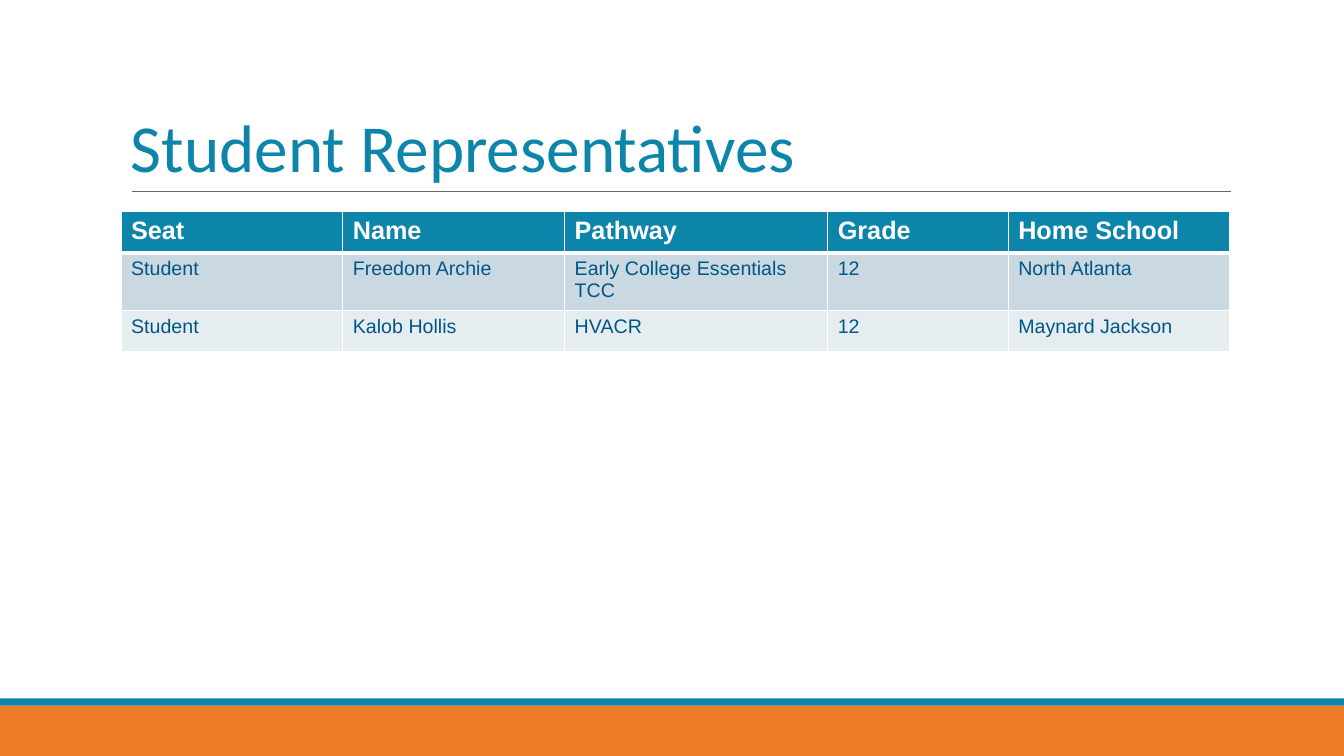
import pptx
import pptx.util
import pptx.dml.color
import pptx.enum.shapes
import pptx.enum.text
import pptx.oxml
import pptx.oxml.ns

Inches = pptx.util.Inches
Pt = pptx.util.Pt
RGBColor = pptx.dml.color.RGBColor

TEAL = RGBColor(0x0D, 0x85, 0xAB)
ORANGE = RGBColor(0xEE, 0x7C, 0x29)
NAVY = RGBColor(0x00, 0x56, 0x85)
GRAY = RGBColor(0x66, 0x66, 0x66)
WHITE = RGBColor(0xFF, 0xFF, 0xFF)
ROW_FILLS = [TEAL, RGBColor(0xCA, 0xD8, 0xE2), RGBColor(0xE6, 0xED, 0xF1)]


def add_borders(cell, bottom_width):
    properties = cell._tc.get_or_add_tcPr()
    widths = {"lnL": 1, "lnR": 1, "lnT": 1, "lnB": bottom_width}
    for position, (side, width) in enumerate(widths.items()):
        border = pptx.oxml.parse_xml(
            f'<a:{side} {pptx.oxml.ns.nsdecls("a")} w="{Pt(width)}">'
            f'<a:solidFill><a:srgbClr val="{WHITE}"/></a:solidFill></a:{side}>'
        )
        properties.insert(position, border)


deck = pptx.Presentation()
deck.slide_width = Inches(13.33)
deck.slide_height = Inches(7.5)
page = deck.slides.add_slide(deck.slide_layouts[6])

# Footer bands
for top, height, color in [(7, 0.5, ORANGE), (6.93, 0.07, TEAL)]:
    band = page.shapes.add_shape(
        pptx.enum.shapes.MSO_SHAPE.RECTANGLE,
        Inches(0), Inches(top), Inches(13.33), Inches(height))
    band.shadow.inherit = False
    band.fill.solid()
    band.fill.fore_color.rgb = color
    band.line.fill.background()

# Rule under the title
rule = page.shapes.add_connector(
    pptx.enum.shapes.MSO_CONNECTOR.STRAIGHT,
    Inches(1.31), Inches(1.9), Inches(12.21), Inches(1.9))
rule.line.color.rgb = GRAY
rule.line.width = Pt(0.75)
rule._element.spPr.append(
    pptx.oxml.parse_xml(f'<a:effectLst {pptx.oxml.ns.nsdecls("a")}/>'))

# Title
title = page.shapes.add_textbox(Inches(1.2), Inches(0.31), Inches(11), Inches(1.59))
title.text_frame.word_wrap = True
title.text_frame.vertical_anchor = pptx.enum.text.MSO_ANCHOR.BOTTOM
para = title.text_frame.paragraphs[0]
para.text = "Student Representatives"
para.line_spacing = 0.85
para.font.name = "Calibri"
para.font.size = Pt(48)
para.font.color.rgb = TEAL

# Table of representatives
representatives = [
    ["Seat", "Name", "Pathway", "Grade", "Home School"],
    ["Student", "Freedom Archie", "Early College Essentials TCC", "12", "North Atlanta"],
    ["Student", "Kalob Hollis", "HVACR", "12", "Maynard Jackson"],
]
column_widths = [2.2, 2.2, 2.61, 1.79, 2.2]
row_heights = [0.41, 0.53, 0.41]
table = page.shapes.add_table(
    len(row_heights), len(column_widths),
    Inches(1.2), Inches(2.1), Inches(11), Inches(sum(row_heights))).table
for column, width in zip(table.columns, column_widths):
    column.width = Inches(width)

for row_index, (row, height) in enumerate(zip(table.rows, row_heights)):
    row.height = Inches(height)
    is_header = row_index == 0
    for cell, text in zip(row.cells, representatives[row_index]):
        cell.fill.solid()
        cell.fill.fore_color.rgb = ROW_FILLS[row_index]
        add_borders(cell, 3 if is_header else 1)
        para = cell.text_frame.paragraphs[0]
        para.text = text
        para.font.name = "Arial"
        para.font.size = Pt(18 if is_header else 14)
        para.font.bold = is_header
        para.font.color.rgb = WHITE if is_header else NAVY

deck.save("out.pptx")
